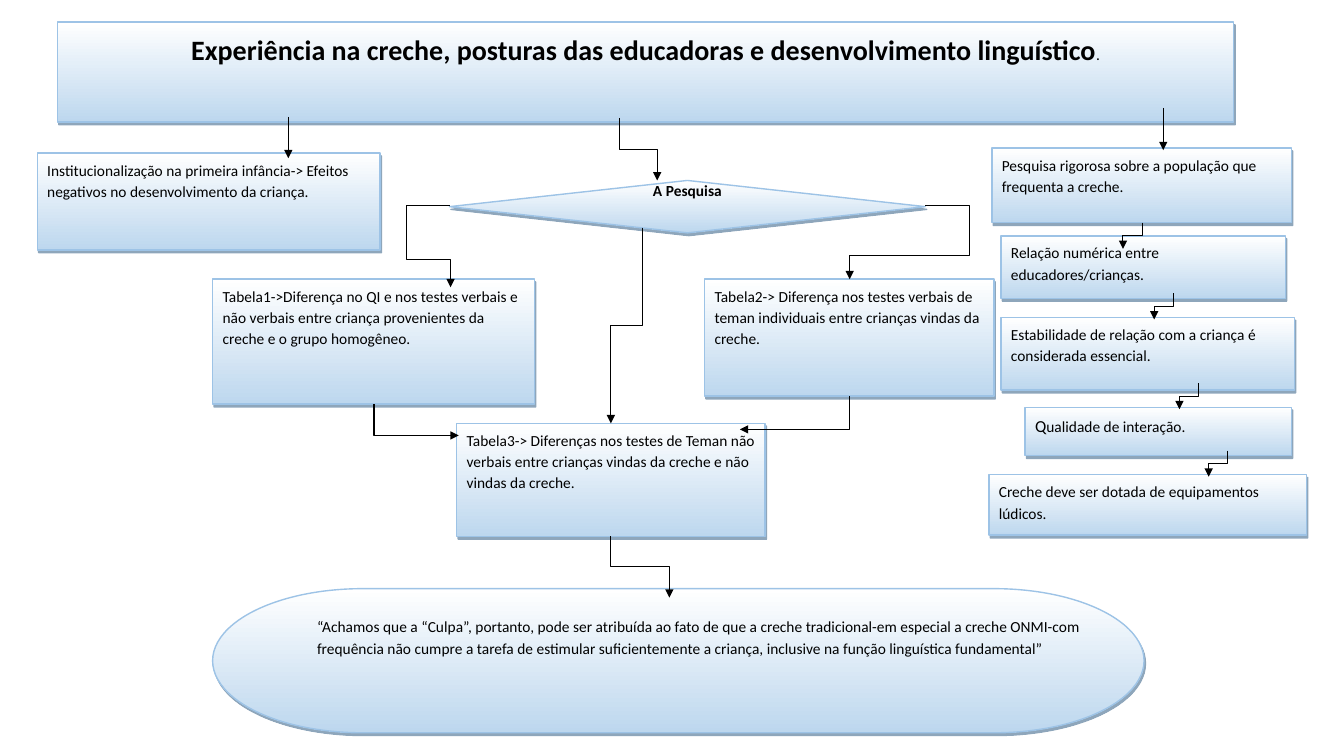
from lxml.etree import SubElement
from pptx import Presentation
from pptx.dml.color import RGBColor
from pptx.enum.shapes import MSO_CONNECTOR as CONN, MSO_SHAPE as SHAPE
from pptx.enum.text import MSO_ANCHOR as ANCHOR, MSO_AUTO_SIZE as AUTO, PP_ALIGN as ALIGN
from pptx.oxml.ns import qn
from pptx.util import Inches, Pt

COLS, ROWS = 133.33, 75
WIDTH, HEIGHT = Inches(13.33), Inches(7.5)
FONT, INK, EDGE, TOP, BOTTOM, SHADE = "Calibri", "000000", "9DC3E6", "FFFFFF", "BDD7EE", "1F4E79"

TITLE = (5.7, 2.2, 116.7, 9.9)
TITLE_RUNS = [
    ("Experiência na creche, posturas das educadoras e desenvolvimento linguístico", 20, True),
    (".", 11, False),
]
RESEARCH = ((44.6, 17.9, 47.2, 5.2), "A Pesquisa")
QUOTE = (
    (21.1, 58.4, 92.4, 14.3),
    "“Achamos que a “Culpa”, portanto, pode ser atribuída ao fato de que a creche tradicional-em "
    "especial a creche ONMI-com frequência não cumpre a tarefa de estimular suficientemente a "
    "criança, inclusive na função linguística fundamental”",
)
BOXES = [
    ((98.4, 14.7, 29.7, 7.4), [("Pesquisa rigorosa sobre a população que frequenta a creche.", 11, False)]),
    ((3.7, 15.2, 34, 9.6), [("Institucionalização na primeira infância-> Efeitos negativos no "
                             "desenvolvimento da criança.", 11, False)]),
    ((99.3, 23.4, 28.2, 6.2), [("Relação numérica entre educadores/crianças.", 11, False)]),
    ((21.1, 27.7, 31.9, 12.4), [("Tabela1->Diferença no QI e nos testes verbais e não verbais entre criança "
                                 "provenientes da creche e o grupo homogêneo.", 11, False)]),
    ((101.7, 40.4, 26.4, 4.8), [("Q", 12, False), ("ualidade de interação.", 11, False)]),
    ((99.3, 31.5, 29.1, 7.2), [("Estabilidade de relação com a criança é considerada essencial.", 11, False)]),
    ((98.1, 47.1, 31.5, 6), [("Creche deve ser dotada de equipamentos lúdicos.", 11, False)]),
    ((69.9, 27.7, 28.7, 11.6), [("Tabela2-> Diferença nos testes verbais de teman individuais entre crianças "
                                 "vindas da creche.", 11, False)]),
    ((45.3, 42, 30.6, 11.2), [("Tabela3-> Diferenças nos testes de Teman não verbais entre crianças vindas "
                               "da creche e não vindas da creche.", 11, False)]),
]
STRAIGHT = [((28.6, 11.6), (28.6, 15.7)), ((115.4, 10.7), (115.4, 14.9))]
STEP = (-1.9, 2.6)
STEP_STARTS = [(113.3, 22.1), (116.4, 29.1), (118.9, 38), (121.8, 44.7)]
ELBOWS = [
    ((61.5, 11.7), (65.2, 17.9)),
    ((63.7, 22.6), (60.6, 42)),
    ((60.6, 53.2), (66.4, 59.3)),
] + [((x, y), (x + STEP[0], y + STEP[1])) for x, y in STEP_STARTS]
CORNERS = [((84.3, 39.3), (73.4, 42.6)), ((37.1, 40.1), (45.5, 43.2))]
LOOPS = [((91.8, 20.4), (84.3, 27.7), (-0.58, 0.68)), ((44.6, 20.4), (44.7, 28.5), (-43, 0.66))]


def color(value):
    """Turn a hex string into a colour."""
    return RGBColor.from_string(value)


def gx(cols):
    """Convert grid columns to a length."""
    return round(WIDTH * cols / COLS)


def gy(rows):
    """Convert grid rows to a length."""
    return round(HEIGHT * rows / ROWS)


def place(box):
    """Convert a grid box to left, top, width and height."""
    x, y, w, h = box
    return gx(x), gy(y), gx(w), gy(h)


def style(sp):
    """Give a shape its gradient, outline and offset shadow."""
    sp.fill.gradient()
    sp.fill.gradient_angle = 270
    for stop, value in zip(sp.fill.gradient_stops, (TOP, BOTTOM)):
        stop.color.rgb = color(value)
    sp.line.color.rgb = color(EDGE)
    sp.line.width = Pt(1)
    sp.shadow.inherit = False
    effects = sp._element.spPr.find(qn("a:effectLst"))
    shadow = SubElement(effects, qn("a:outerShdw"), dist=str(Pt(2.2)), dir=str(63 * 60000),
                        algn="ctr", rotWithShape="0")
    tone = SubElement(shadow, qn("a:srgbClr"), val=SHADE)
    SubElement(tone, qn("a:alpha"), val="50000")


def write(sp, runs, align=ALIGN.LEFT, anchor=ANCHOR.TOP):
    """Write one paragraph of formatted runs and return its frame."""
    tf = sp.text_frame
    tf.word_wrap = True
    tf.auto_size = AUTO.NONE
    tf.vertical_anchor = anchor
    p = tf.paragraphs[0]
    p.alignment = align
    p.line_spacing = 1.15
    p.space_before = Pt(0)
    for text, size, bold in runs:
        r = p.add_run()
        r.text = text
        r.font.name, r.font.size, r.font.bold = FONT, Pt(size), bold
        r.font.color.rgb = color(INK)
    return tf


def add_box(shapes, kind, box, runs, align=ALIGN.LEFT, anchor=ANCHOR.TOP):
    """Add a styled flowchart shape and return its frame."""
    sp = shapes.add_shape(kind, *place(box))
    style(sp)
    return write(sp, runs, align, anchor)


def add_arrow(shapes, kind, x1, y1, x2, y2):
    """Add a thin black connector with a triangle at its end."""
    c = shapes.add_connector(kind, x1, y1, x2, y2)
    c.line.color.rgb = color(INK)
    c.line.width = Pt(0.75)
    SubElement(c.line._get_or_add_ln(), qn("a:tailEnd"), type="triangle")
    SubElement(c._element.spPr, qn("a:effectLst"))
    return c


def add_bend(shapes, start, end, preset):
    """Add a bent arrow that leaves its start downwards."""
    x1, y1, x2, y2 = gx(start[0]), gy(start[1]), gx(end[0]), gy(end[1])
    w, h = y2 - y1, abs(x2 - x1)
    left, top = (x1 + x2 - w) // 2, (y1 + y2 - h) // 2
    c = add_arrow(shapes, CONN.ELBOW, left, top, left + w, top + h)
    xfrm = c._element.spPr.find(qn("a:xfrm"))
    xfrm.set("rot", str((90 if x2 < x1 else 270) * 60000))
    if x2 > x1:
        xfrm.set("flipH", "1")
    c._element.spPr.find(qn("a:prstGeom")).set("prst", preset)


def add_loop(shapes, start, end, shares):
    """Add an arrow that leaves sideways and turns back to its end."""
    c = add_arrow(shapes, CONN.ELBOW, gx(start[0]), gy(start[1]), gx(end[0]), gy(end[1]))
    geom = c._element.spPr.find(qn("a:prstGeom"))
    geom.set("prst", "bentConnector4")
    guides = geom.find(qn("a:avLst"))
    for i, share in enumerate(shares, 1):
        SubElement(guides, qn("a:gd"), name=f"adj{i}", fmla=f"val {round(share * 100000)}")


def main():
    """Build the flowchart slide and save it."""
    prs = Presentation()
    prs.slide_width, prs.slide_height = WIDTH, HEIGHT
    s = prs.slides.add_slide(prs.slide_layouts[5])
    shapes = s.shapes
    title = shapes.title
    title.left, title.top, title.width, title.height = place(TITLE)
    geom = SubElement(title._element.spPr, qn("a:prstGeom"), prst="flowChartTerminator")
    SubElement(geom, qn("a:avLst"))
    style(title)
    write(title, TITLE_RUNS, ALIGN.CENTER)

    box, text = QUOTE
    tf = add_box(shapes, SHAPE.FLOWCHART_TERMINATOR, box, [(text, 11, False)])
    tf.margin_left = Inches(0.6)
    box, text = RESEARCH
    tf = add_box(shapes, SHAPE.FLOWCHART_DECISION, box, [(text, 11, True)], ALIGN.CENTER, ANCHOR.BOTTOM)
    tf.margin_top, tf.margin_bottom = 0, Inches(0.2)
    for box, runs in BOXES:
        add_box(shapes, SHAPE.FLOWCHART_PROCESS, box, runs)

    for (x1, y1), (x2, y2) in STRAIGHT:
        add_arrow(shapes, CONN.STRAIGHT, gx(x1), gy(y1), gx(x2), gy(y2))
    for start, end in ELBOWS:
        add_bend(shapes, start, end, "bentConnector3")
    for start, end in CORNERS:
        add_bend(shapes, start, end, "bentConnector2")
    for start, end, shares in LOOPS:
        add_loop(shapes, start, end, shares)
    prs.save("out.pptx")


if __name__ == "__main__":
    main()
